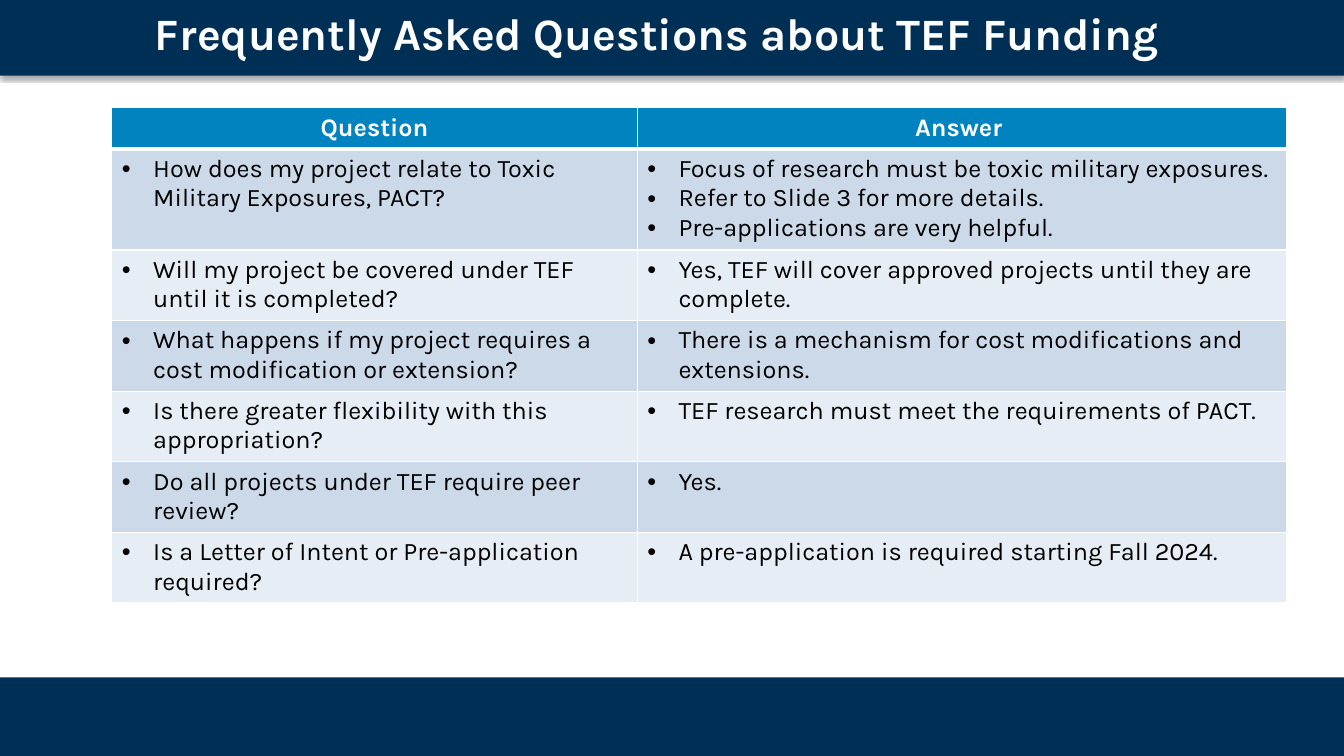
from dataclasses import dataclass

from lxml import etree
from pptx import Presentation
from pptx.dml.color import RGBColor
from pptx.enum import shapes, text
from pptx.oxml import ns
from pptx.util import Inches, Pt


@dataclass(frozen=True)
class Theme:
    face: str = "Karla"
    navy: str = "002F56"
    blue: str = "0083BE"
    bands: tuple = ("CCD9E8", "E7EDF4")
    white: str = "FFFFFF"
    black: str = "000000"
    title: int = 32
    body: int = 18


look = Theme()


def style(para, size, color, bold):
    vals = {"name": look.face, "size": Pt(size), "bold": bold}
    for key, val in vals.items():
        setattr(para.font, key, val)
    para.font.color.rgb = RGBColor.from_string(color)


def add(parent, tag, **attrs):
    node = etree.SubElement(parent, ns.qn(tag))
    for key, val in attrs.items():
        node.set(key, str(val))
    return node


deck = Presentation()
deck.slide_width, deck.slide_height = Inches(13.33), Inches(7.5)
slide = deck.slides.add_slide(deck.slide_layouts[5])

# Navy bars: footer, then header
for top, high in ((6.72, 0.8), (0, 0.75)):
    bar = slide.shapes.add_shape(
        shapes.MSO_SHAPE.RECTANGLE, 0, Inches(top), deck.slide_width, Inches(high))
    bar.fill.solid()
    bar.fill.fore_color.rgb = RGBColor.from_string(look.navy)
    bar.line.fill.background()
    bar.shadow.inherit = False

# Soft shadow under the header bar
glow = bar._element.spPr.find(ns.qn("a:effectLst"))
shade = add(glow, "a:outerShdw", blurRad=Pt(3.1), dist=Pt(1.8), dir=5400000,
            algn="t", rotWithShape=0)
add(add(shade, "a:srgbClr", val=look.black), "a:alpha", val=35000)

# Title, in front of the header bar
title = slide.shapes.title
slide.shapes._spTree.append(title._element)
place = {"left": -0.21, "top": 0, "width": 13.46, "height": 0.64}
for key, val in place.items():
    setattr(title, key, Inches(val))
frame = title.text_frame
frame.text = "Frequently Asked Questions about TEF Funding"
form = {"word_wrap": True, "auto_size": text.MSO_AUTO_SIZE.SHAPE_TO_FIT_TEXT,
        "vertical_anchor": text.MSO_ANCHOR.MIDDLE}
for key, val in form.items():
    setattr(frame, key, val)
frame.paragraphs[0].alignment = text.PP_ALIGN.CENTER
style(frame.paragraphs[0], look.title, look.white, True)

# Table wording: each cell is a list of paragraphs
rows = [
    (["Question"], ["Answer "]),
    (["How does my project relate to Toxic Military Exposures, PACT? "],
     ["Focus of research must be toxic military exposures. ",
      "Refer to Slide 3 for more details.",
      "Pre-applications are very helpful."]),
    (["Will my project be covered under TEF until it is completed?"],
     ["Yes, TEF will cover approved projects until they are complete."]),
    (["What happens if my project requires a cost modification or extension?"],
     ["There is a mechanism for cost modifications and extensions."]),
    (["Is there greater flexibility with this appropriation?"],
     ["TEF research must meet the requirements of PACT."]),
    (["Do all projects under TEF require peer review?"], ["Yes."]),
    (["Is a Letter of Intent or Pre-application required?"],
     ["A pre-application is required starting Fall 2024.  "]),
]
highs = [0.41, 1.0] + [0.7] * 5
wides = [5.21, 6.44]

# Table grid
grid = slide.shapes.add_table(
    len(rows), len(wides), Inches(1.11), Inches(1.07),
    Inches(sum(wides)), Inches(sum(highs))).table
for col, wide in zip(grid.columns, wides):
    col.width = Inches(wide)
for row, high in zip(grid.rows, highs):
    row.height = Inches(high)

# Cells: white rules, banded fill, bulleted text
for r, row in enumerate(rows):
    head = r == 0
    for c, lines in enumerate(row):
        cell = grid.cell(r, c)
        props = cell._tc.get_or_add_tcPr()
        for side in "LRTB":
            thick = (r, side) in ((0, "B"), (1, "T"))
            rule = add(props, f"a:ln{side}", w=Pt(3 if thick else 1))
            add(add(rule, "a:solidFill"), "a:srgbClr", val=look.white)
        cell.fill.solid()
        cell.fill.fore_color.rgb = RGBColor.from_string(
            look.blue if head else look.bands[(r - 1) % 2])
        cell.text = "\n".join(lines)
        for para in cell.text_frame.paragraphs:
            if head:
                para.alignment = text.PP_ALIGN.CENTER
            else:
                pad = para._p.get_or_add_pPr()
                pad.set("marL", str(Inches(0.31)))
                pad.set("indent", str(-Inches(0.31)))
                add(pad, "a:buFont", typeface="Arial")
                add(pad, "a:buChar", char="•")
            style(para, look.body, look.white if head else look.black, head)

deck.save("out.pptx")
